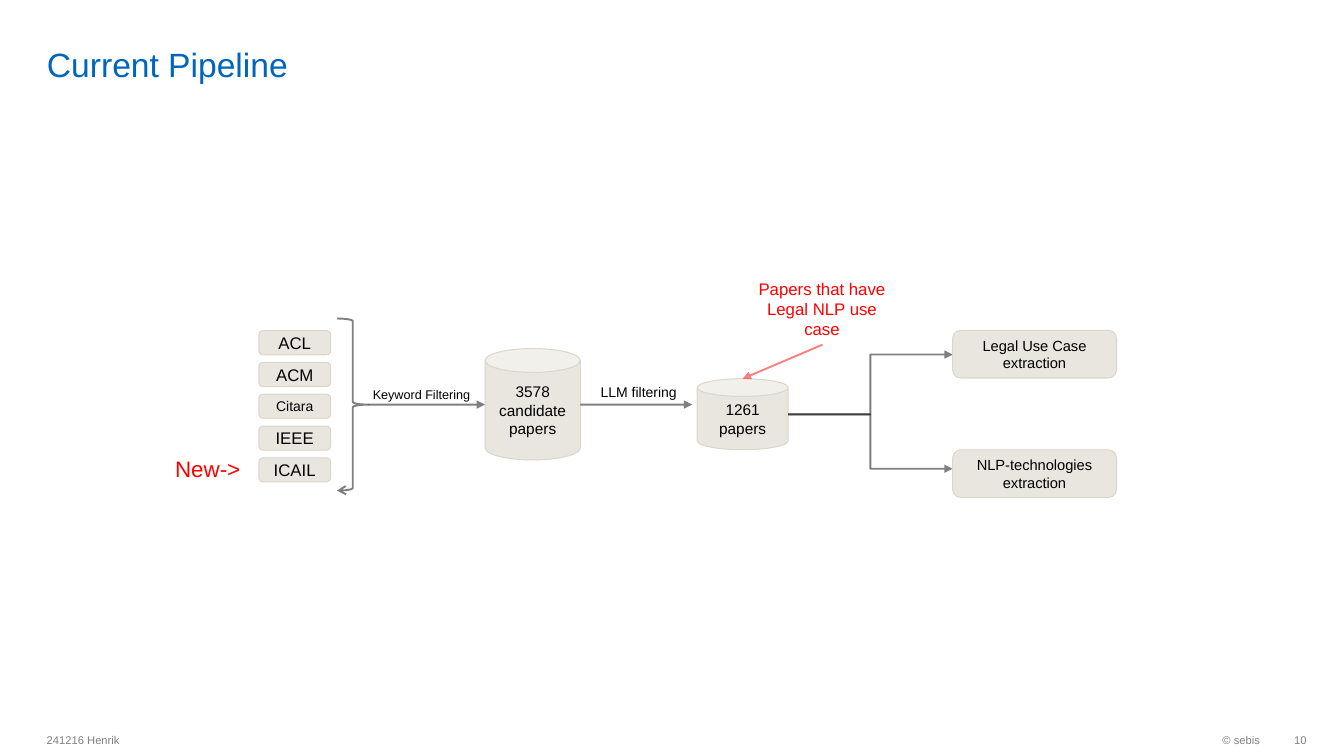
from lxml.etree import SubElement
from pptx import Presentation
from pptx.dml.color import RGBColor
from pptx.enum.shapes import MSO_CONNECTOR, MSO_SHAPE
from pptx.enum.text import MSO_ANCHOR, PP_ALIGN
from pptx.oxml.ns import qn
from pptx.util import Pt

FONT = "Arial"
BLUE, GREY, BLACK, RED = "0065BD", "808080", "000000", "FF0000"
BOX_FILL, BOX_LINE = "E8E6DF", "DAD7CB"
LEFT, CENTER, RIGHT = PP_ALIGN.LEFT, PP_ALIGN.CENTER, PP_ALIGN.RIGHT
TOP, MIDDLE = MSO_ANCHOR.TOP, MSO_ANCHOR.MIDDLE

TITLE = "Current Pipeline"
SOURCES = [("ACL", 12), ("ACM", 12), ("Citara", 10), ("IEEE", 12), ("ICAIL", 12)]
SOURCE_LEFT, SOURCE_TOP, SOURCE_PITCH = 185, 236.2, 22.7
SOURCE_WIDTH, SOURCE_HEIGHT = 51.2, 17.2

# paragraphs, (left, top, width, height)
STORES = [
    (["3578", "candidate papers"], (346.5, 249, 68, 79.5)),
    (["1261", "papers"], (498, 270.5, 65, 50.7)),
]
EXTRACTIONS = [
    ("NLP-technologies extraction", (680.5, 321.3, 117, 34)),
    ("Legal Use Case extraction", (680.5, 236, 117, 34)),
]
BRACE = (240.7, 227.5, 22.6, 123)

# text, place, size, colour, alignment, anchor
LABELS = [
    ("New->", (118, 321.5, 63, 26.6), 16, RED, LEFT, TOP),
    ("Keyword Filtering", (259.2, 273, 88, 18.2), 9, BLACK, LEFT, TOP),
    ("LLM filtering", (422, 270.4, 71, 19.4), 10, BLACK, LEFT, TOP),
    ("Papers that have Legal NLP use case", (530.7, 195.4, 113, 51), 12, RED, CENTER, TOP),
    ("241216 Henrik", (26.2, 517, 453.6, 23), 8, GREY, LEFT, MIDDLE),
    ("© sebis", (738.7, 517.2, 168.5, 23), 8, GREY, RIGHT, MIDDLE),
    ("10", (907.2, 517.2, 33.2, 23), 8, GREY, RIGHT, MIDDLE),
]

# kind, start, end, colour
STRAIGHT, ELBOW = MSO_CONNECTOR.STRAIGHT, MSO_CONNECTOR.ELBOW
ARROWS = [
    (STRAIGHT, (263.3, 289), (346.5, 289), BLACK),
    (STRAIGHT, (414.5, 289), (494.5, 289), BLACK),
    (STRAIGHT, (587.5, 246.2), (530.5, 270.5), RED),
    (ELBOW, (563, 296), (680.5, 334.8), BLACK),
    (ELBOW, (563, 296), (680.5, 253.3), BLACK),
]


def rgb(value):
    return RGBColor.from_string(value)


def write(frame, paragraphs, size, color, align=CENTER, anchor=MIDDLE):
    frame.word_wrap = True
    frame.vertical_anchor = anchor
    for index, text in enumerate(paragraphs):
        paragraph = frame.add_paragraph() if index else frame.paragraphs[0]
        paragraph.alignment = align
        run = paragraph.add_run()
        run.text = text
        run.font.name = FONT
        run.font.size = Pt(size)
        run.font.color.rgb = rgb(color)


def add_box(slide, kind, place, paragraphs, size):
    box = slide.shapes.add_shape(kind, *map(Pt, place))
    box.shadow.inherit = False
    box.fill.solid()
    box.fill.fore_color.rgb = rgb(BOX_FILL)
    box.line.color.rgb = rgb(BOX_LINE)
    box.line.width = Pt(0.75)
    write(box.text_frame, paragraphs, size, BLACK)


def style_arrow(shape, color, head):
    """Half-transparent line with an arrowhead at its end."""
    shape.line.width = Pt(1.35)
    shape.line.color.rgb = rgb(color)
    line = shape.line._get_or_add_ln()
    SubElement(line.find(".//" + qn("a:srgbClr")), qn("a:alpha"), val="50000")
    SubElement(line, qn("a:tailEnd"), type=head)


def add_arrow(slide, kind, start, end, color):
    arrow = slide.shapes.add_connector(kind, *map(Pt, start + end))
    style_arrow(arrow, color, "triangle")
    SubElement(arrow._element.spPr, qn("a:effectLst"))


def add_brace(slide):
    brace = slide.shapes.add_shape(MSO_SHAPE.RIGHT_BRACE, *map(Pt, BRACE))
    brace.fill.background()
    style_arrow(brace, BLACK, "arrow")
    brace.shadow.inherit = False


def add_title(slide):
    title = slide.shapes.title
    title.left, title.top, title.width, title.height = map(Pt, (26.3, 3.3, 833.8, 56.8))
    frame = title.text_frame
    frame.margin_top = frame.margin_bottom = 0
    write(frame, [TITLE], 24, BLUE, LEFT, MSO_ANCHOR.BOTTOM)


def main():
    deck = Presentation()
    deck.slide_width, deck.slide_height = Pt(960), Pt(540)
    slide = deck.slides.add_slide(deck.slide_layouts[5])
    add_title(slide)

    for row, (source, size) in enumerate(SOURCES):
        place = (SOURCE_LEFT, SOURCE_TOP + row * SOURCE_PITCH, SOURCE_WIDTH, SOURCE_HEIGHT)
        add_box(slide, MSO_SHAPE.ROUNDED_RECTANGLE, place, [source], size)
    add_brace(slide)
    for paragraphs, place in STORES:
        add_box(slide, MSO_SHAPE.CAN, place, paragraphs, 11)
    for arrow in ARROWS:
        add_arrow(slide, *arrow)
    for text, place in EXTRACTIONS:
        add_box(slide, MSO_SHAPE.ROUNDED_RECTANGLE, place, [text], 10.5)
    for text, place, *style in LABELS:
        label = slide.shapes.add_textbox(*map(Pt, place))
        write(label.text_frame, [text], *style)

    deck.save("out.pptx")


if __name__ == "__main__":
    main()
